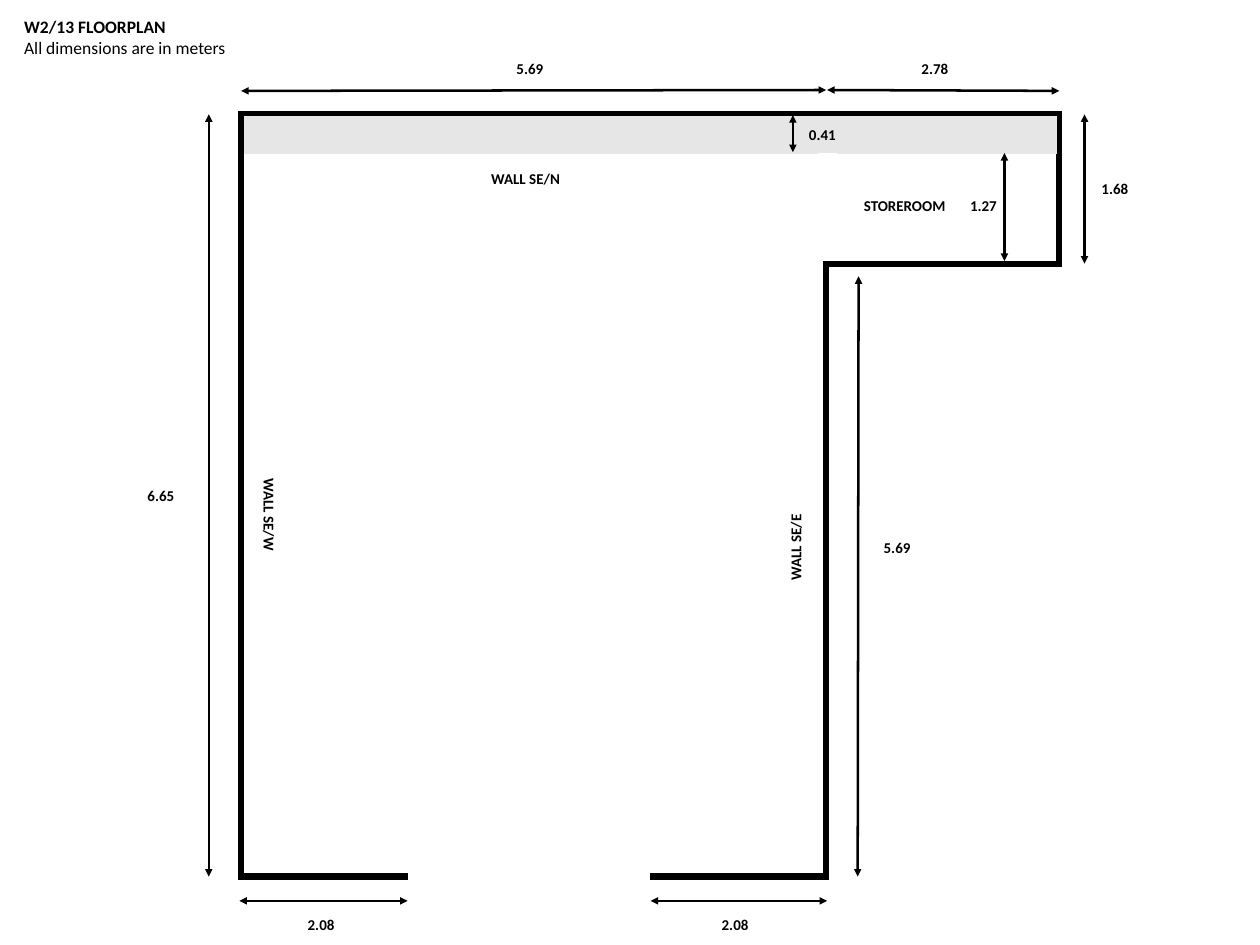
from dataclasses import dataclass

from lxml import etree
from pptx import Presentation
from pptx.dml.color import RGBColor
from pptx.enum.shapes import MSO_CONNECTOR, MSO_SHAPE
from pptx.enum.text import MSO_AUTO_SIZE
from pptx.oxml.ns import qn
from pptx.util import Inches, Pt

RECTANGLE = MSO_SHAPE.RECTANGLE
STRAIGHT = MSO_CONNECTOR.STRAIGHT
FIT_SHAPE = MSO_AUTO_SIZE.SHAPE_TO_FIT_TEXT

BLACK = RGBColor(0x00, 0x00, 0x00)
WHITE = RGBColor(0xFF, 0xFF, 0xFF)
GREY = RGBColor(0xE7, 0xE6, 0xE6)
FONT = "Calibri"

# The slide is a grid of square cells
COLUMNS, ROWS = 140, 105
CELL = Inches(0.1)
LABEL_HEIGHT = 3


@dataclass
class Box:
    """A region of the grid, measured in columns and rows."""
    left: float
    top: float
    width: float
    height: float

    def inner(self, column, row, width, height):
        return Box(self.left + column, self.top + row, width, height)

    def point(self, column, row):
        return cells(self.left + column, self.top + row)

    def lengths(self):
        return cells(self.left, self.top, self.width, self.height)


def cells(*counts):
    return [round(count * CELL) for count in counts]


def add_rectangle(page, box, line_color, line_width, fill=None):
    shape = page.shapes.add_shape(RECTANGLE, *box.lengths())
    shape.shadow.inherit = False
    if fill is None:
        shape.fill.background()
    else:
        shape.fill.solid()
        shape.fill.fore_color.rgb = fill
    shape.line.color.rgb = line_color
    shape.line.width = Pt(line_width)
    # Square corners
    etree.SubElement(shape.line._get_or_add_ln(), qn("a:miter"), lim="800000")


def add_arrow(page, start, end):
    arrow = page.shapes.add_connector(STRAIGHT, *start, *end)
    arrow.line.color.rgb = BLACK
    arrow.line.width = Pt(2)
    line = arrow.line._get_or_add_ln()
    for tag in ("a:headEnd", "a:tailEnd"):
        etree.SubElement(line, qn(tag), type="triangle")
    etree.SubElement(arrow._element.spPr, qn("a:effectLst"))


def add_text(page, box, lines, size=12, rotation=0, wrap=True):
    """Each line is a pair of wording and boldness."""
    text_box = page.shapes.add_textbox(*box.lengths())
    text_box.rotation = rotation
    frame = text_box.text_frame
    frame.word_wrap = wrap
    frame.auto_size = FIT_SHAPE
    for index, (wording, bold) in enumerate(lines):
        para = frame.add_paragraph() if index else frame.paragraphs[0]
        para.text = wording
        para.font.name = FONT
        para.font.size = Pt(size)
        para.font.bold = bold
        para.font.color.rgb = BLACK


def draw_title(page, box):
    add_text(page, box, [("W2/13 FLOORPLAN", True),
                         ("All dimensions are in meters", False)], size=14)


def draw_walls(page, plan, hall_width, store_depth):
    # Hall and storeroom outlines
    store_width = plan.width - hall_width
    add_rectangle(page, plan.inner(0, 0, hall_width, plan.height), BLACK, 5)
    add_rectangle(page, plan.inner(hall_width, 0, store_width, store_depth),
                  BLACK, 5)
    # Shaded strip along the north wall
    add_rectangle(page, plan.inner(0.4, 0.3, plan.width - 0.7, 4), GREY, 1, GREY)
    # Openings to the storeroom and at the entrance
    for opening in ((hall_width - 0.8, 4.4, 1.9, 11.8),
                    (18.6, plan.height - 2.6, 26.8, 4.4)):
        add_rectangle(page, plan.inner(*opening), WHITE, 1, WHITE)


def draw_dimensions(page, plan, hall_width, store_depth):
    right, bottom = plan.width, plan.height
    above, below = -2.6, bottom + 2.7
    label_above, label_below = -6.6, bottom + 3.8
    # Value, arrow start, arrow end, label corner
    dimensions = [
        ("5.69", (0, above), (hall_width, above - 0.1), (29.6, label_above)),
        ("2.78", (hall_width + 0.1, above - 0.1), (right, above),
         (74.6, label_above)),
        ("1.68", (right + 2.8, 0), (right + 2.8, store_depth),
         (right + 3.7, 6.8)),
        ("6.65", (-3.6, 0), (-3.6, bottom), (-11.4, 40.9)),
        ("2.08", (18.5, below), (-0.2, below), (6.4, label_below)),
        ("2.08", (hall_width + 0.1, below), (45.5, below),
         (52.4, label_below)),
        ("5.69", (hall_width + 3.6, store_depth + 1.4),
         (hall_width + 3.5, bottom), (hall_width + 5.4, 46.7)),
        ("0.41", (61.3, 0.1), (61.3, 4.2), (62.1, 0.8)),
        ("1.27", (84.8, 4.3), (84.8, store_depth - 0.3), (80, 8.6)),
    ]
    for value, start, end, corner in dimensions:
        add_arrow(page, plan.point(*start), plan.point(*end))
        add_text(page, plan.inner(*corner, 5.8, LABEL_HEIGHT), [(value, True)])


def draw_names(page, plan):
    # Name, column, row, width, rotation, wrap
    names = [
        ("WALL SE/E", 56.3, 46, 10.6, 270, True),
        ("WALL SE/W", -2, 43.1, 10.3, 90, True),
        ("WALL SE/N", 26.8, 5.6, 10.5, 0, True),
        ("STOREROOM", 68.2, 8.6, 11.2, 0, False),
    ]
    for name, column, row, width, rotation, wrap in names:
        add_text(page, plan.inner(column, row, width, LABEL_HEIGHT),
                 [(name, True)], rotation=rotation, wrap=wrap)


def draw_floorplan(page, plan):
    hall_width, store_depth = 65, 16.6
    draw_walls(page, plan, hall_width, store_depth)
    draw_dimensions(page, plan, hall_width, store_depth)
    draw_names(page, plan)


def main():
    deck = Presentation()
    deck.slide_width, deck.slide_height = cells(COLUMNS, ROWS)
    page = deck.slides.add_slide(deck.slide_layouts[6])
    draw_floorplan(page, Box(26.8, 12.7, 90.9, 84.7))
    draw_title(page, Box(1.7, 1.3, 25, 5.7))
    deck.save("out.pptx")


if __name__ == "__main__":
    main()
